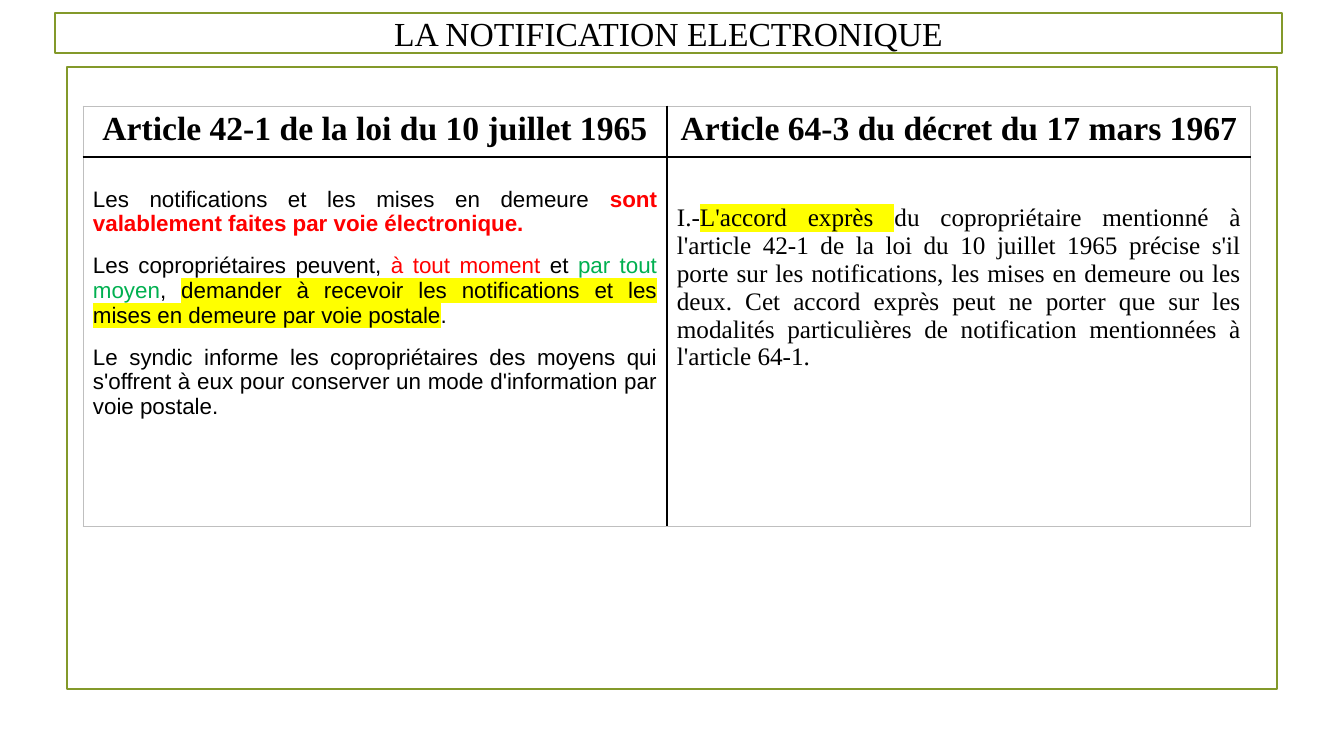
from dataclasses import dataclass

from lxml.etree import SubElement
from pptx import Presentation
from pptx.dml.color import RGBColor
from pptx.enum.shapes import MSO_SHAPE
from pptx.enum.text import MSO_ANCHOR, MSO_AUTO_SIZE, PP_ALIGN
from pptx.oxml import parse_xml
from pptx.oxml.ns import nsdecls, qn
from pptx.util import Emu, Pt

COLORS = {
    "black": "000000", "white": "FFFFFF", "olive": "83992A", "red": "FF0000",
    "green": "00B050", "yellow": "FFFF00", "grey": "BFBFBF",
}
SERIF = "Times New Roman"


@dataclass(frozen=True)
class Piece:
    text: str
    color: str = "black"
    bold: bool = False
    highlight: bool = False


@dataclass(frozen=True)
class CellText:
    paragraphs: list[list[Piece]]
    font: str
    size: int
    align: PP_ALIGN = PP_ALIGN.JUSTIFY
    top_margin: int = 5
    space_after: int = 12


def heading(text: str) -> CellText:
    return CellText([[Piece(text, bold=True)]], SERIF, 24, PP_ALIGN.CENTER, space_after=0)


CELLS = [
    [heading("Article 42-1 de la loi du 10 juillet 1965"),
     heading("Article 64-3 du décret du 17 mars 1967")],
    [CellText([
        [Piece("Les notifications et les mises en demeure "),
         Piece("sont valablement faites par voie électronique.", "red", bold=True)],
        [Piece("Les copropriétaires peuvent, "),
         Piece("à tout moment ", "red"),
         Piece("et "),
         Piece("par tout moyen", "green"),
         Piece(", "),
         Piece("demander à recevoir les notifications et les mises en demeure "
               "par voie postale", highlight=True),
         Piece(".")],
        [Piece("Le syndic informe les copropriétaires des moyens qui s'offrent à eux "
               "pour conserver un mode d'information par voie postale.")],
    ], "Arial", 16, top_margin=30),
     CellText([
         [Piece("I.-"),
          Piece("L'accord exprès ", highlight=True),
          Piece("du copropriétaire mentionné à l'article 42-1 de la loi du 10 juillet 1965 "
                "précise s'il porte sur les notifications, les mises en demeure ou les deux. "
                "Cet accord exprès peut ne porter que sur les modalités particulières de "
                "notification mentionnées à l'article 64-1.")],
     ], SERIF, 18, top_margin=47)],
]
COLUMN_WIDTH = 584
ROW_HEIGHTS = [51, 369]


def px(length: int) -> Emu:
    return Emu(round(length * 914400 / 100.8))


def rgb(name: str) -> RGBColor:
    return RGBColor.from_string(COLORS[name])


def place(shape, left: int, top: int, width: int, height: int) -> None:
    shape.left, shape.top = px(left), px(top)
    shape.width, shape.height = px(width), px(height)


def outline(shape, width: float) -> None:
    shape.line.color.rgb = rgb("olive")
    shape.line.width = Pt(width)


def add_piece(paragraph, piece: Piece, font: str, size: int) -> None:
    run = paragraph.add_run()
    run.text = piece.text
    run.font.size = Pt(size)
    run.font.bold = piece.bold
    run.font.color.rgb = rgb(piece.color)
    run.font.name = font
    if piece.highlight:
        mark = parse_xml(f'<a:highlight {nsdecls("a")}>'
                         f'<a:srgbClr val="{COLORS["yellow"]}"/></a:highlight>')
        run.font.fill  # the highlight follows the text fill
        run.font._element.find(qn("a:solidFill")).addnext(mark)


def fill_cell(cell, content: CellText) -> None:
    cell.fill.background()
    cell.vertical_anchor = MSO_ANCHOR.TOP
    cell.margin_left = cell.margin_right = px(10)
    cell.margin_top, cell.margin_bottom = px(content.top_margin), px(5)
    frame = cell.text_frame
    for index, pieces in enumerate(content.paragraphs):
        paragraph = frame.add_paragraph() if index else frame.paragraphs[0]
        paragraph.alignment = content.align
        paragraph.space_after = Pt(content.space_after)
        for piece in pieces:
            add_piece(paragraph, piece, content.font, content.size)


def set_borders(cell, row: int, column: int) -> None:
    """Black inside lines, thin grey outside lines."""
    inside = {"lnL": column == 1, "lnR": column == 0, "lnT": row == 1, "lnB": row == 0}
    properties = cell._tc.get_or_add_tcPr()
    for index, (side, is_inside) in enumerate(inside.items()):
        color, width = ("black", 1) if is_inside else ("grey", 0.75)
        border = SubElement(properties, qn(f"a:{side}"), w=str(Pt(width)))
        fill = SubElement(border, qn("a:solidFill"))
        SubElement(fill, qn("a:srgbClr"), val=COLORS[color])
        properties.insert(index, border)


def add_title(slide) -> None:
    title = slide.shapes.title
    place(title, 55, 13, 1227, 40)
    title.fill.solid()
    title.fill.fore_color.rgb = rgb("white")
    outline(title, 2)
    frame = title.text_frame
    frame.auto_size = MSO_AUTO_SIZE.NONE
    frame.word_wrap = True
    frame.vertical_anchor = MSO_ANCHOR.BOTTOM
    frame.margin_left = frame.margin_right = frame.margin_top = frame.margin_bottom = 0
    paragraph = frame.paragraphs[0]
    paragraph.alignment = PP_ALIGN.CENTER
    add_piece(paragraph, Piece("LA NOTIFICATION ELECTRONIQUE"), SERIF, 24)


def add_frame(slide) -> None:
    frame = slide.shapes.add_shape(MSO_SHAPE.RECTANGLE, px(67), px(67), px(1210), px(622))
    frame.shadow.inherit = False
    frame.fill.background()
    outline(frame, 1.25)


def add_articles(slide) -> None:
    table = slide.shapes.add_table(len(CELLS), 2, px(83), px(106), px(2 * COLUMN_WIDTH),
                                   px(sum(ROW_HEIGHTS))).table
    table.first_row = table.horz_banding = False
    for column in table.columns:
        column.width = px(COLUMN_WIDTH)
    for row, (height, contents) in enumerate(zip(ROW_HEIGHTS, CELLS)):
        table.rows[row].height = px(height)
        for column, content in enumerate(contents):
            cell = table.cell(row, column)
            fill_cell(cell, content)
            set_borders(cell, row, column)


def main() -> None:
    presentation = Presentation()
    presentation.slide_width, presentation.slide_height = px(1344), px(756)
    slide = presentation.slides.add_slide(presentation.slide_layouts[5])
    add_frame(slide)
    add_title(slide)
    add_articles(slide)
    presentation.save("out.pptx")


if __name__ == "__main__":
    main()
